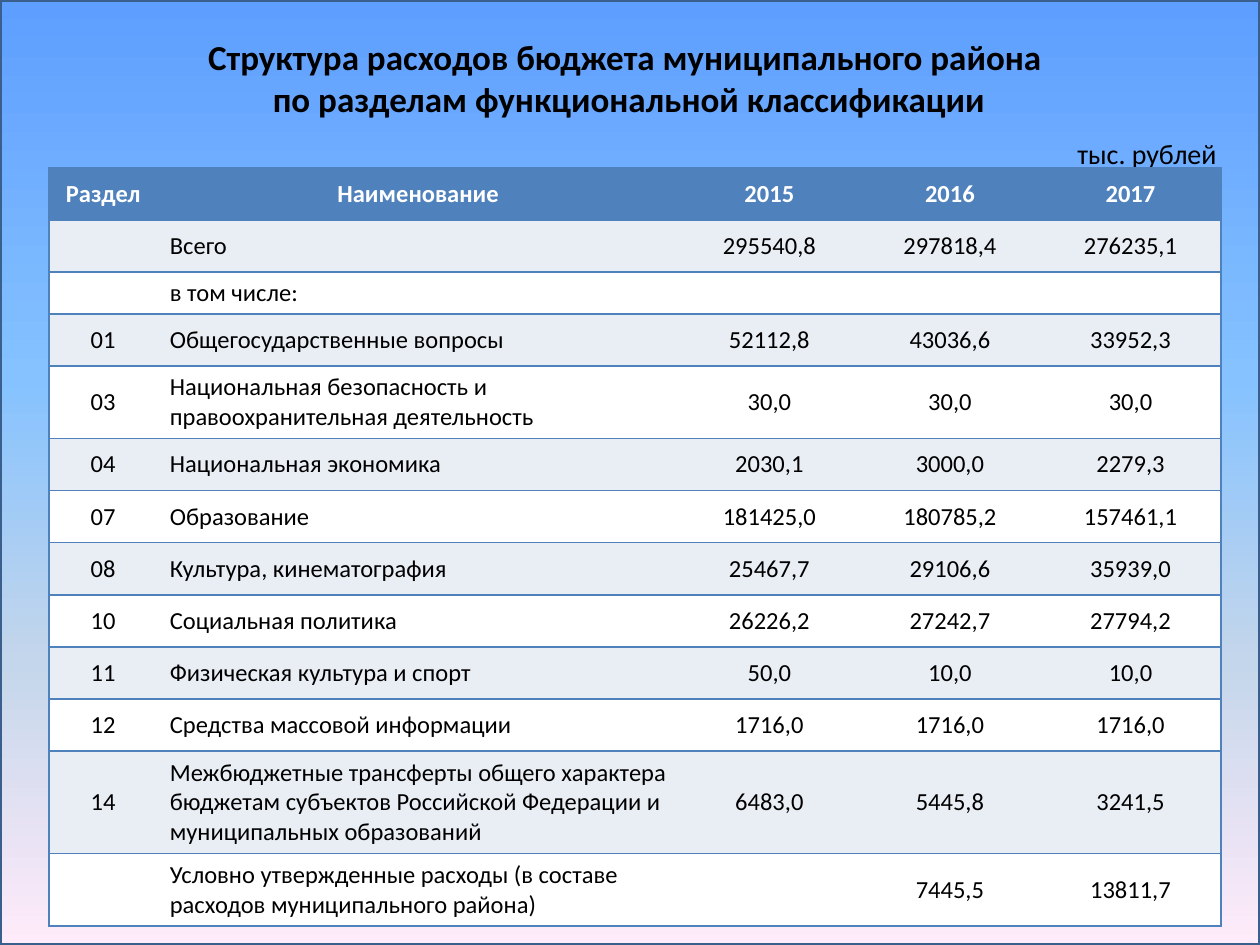
from lxml.etree import SubElement
from pptx import Presentation
from pptx.dml.color import RGBColor
from pptx.enum.shapes import MSO_SHAPE
from pptx.enum.text import MSO_ANCHOR, MSO_AUTO_SIZE, PP_ALIGN
from pptx.oxml.ns import qn
from pptx.util import Cm, Pt

FONT = "Calibri"
BLUE = "4F81BD"
BANDS = ("FFFFFF", "E9EDF4")
GRADIENT = ((0, "5E9EFF"), (40, "85C2FF"), (70, "C4D6EB"), (100, "FFEBFA"))
COLUMN_WIDTHS = (2.18, 10.52, 3.64, 3.64, 3.64)
ROW_HEIGHT = 1.05
SPECIAL_HEIGHTS = {2: 0.85, 4: 1.46, 11: 2.07, 12: 1.46}
ROWS = (
    ("Раздел", "Наименование", "2015", "2016", "2017"),
    ("", "Всего", "295540,8", "297818,4", "276235,1"),
    ("", "в том числе:", "", "", ""),
    ("01", "Общегосударственные вопросы", "52112,8", "43036,6", "33952,3"),
    ("03", "Национальная безопасность и правоохранительная деятельность",
     "30,0", "30,0", "30,0"),
    ("04", "Национальная экономика", "2030,1", "3000,0", "2279,3"),
    ("07", "Образование", "181425,0", "180785,2", "157461,1"),
    ("08", "Культура, кинематография", "25467,7", "29106,6", "35939,0"),
    ("10", "Социальная политика", "26226,2", "27242,7", "27794,2"),
    ("11", "Физическая культура и спорт", "50,0", "10,0", "10,0"),
    ("12", "Средства массовой информации", "1716,0", "1716,0", "1716,0"),
    ("14", "Межбюджетные трансферты общего характера бюджетам субъектов "
     "Российской Федерации и муниципальных образований",
     "6483,0", "5445,8", "3241,5"),
    ("", "Условно утвержденные расходы (в составе расходов муниципального района)",
     "", "7445,5", "13811,7"),
)


def color(value):
    return RGBColor.from_string(value)


def apply_format(target, values):
    for name, value in values.items():
        setattr(target, name, value)


def write_paragraph(para, text, size, bold, ink, layout):
    para.text = text
    apply_format(para, layout)
    for span in para.runs:
        apply_format(span.font, {"name": FONT, "size": Pt(size), "bold": bold})
        span.font.color.rgb = color(ink)
    if not text:
        SubElement(para._p, qn("a:endParaRPr"), sz=str(size * 100))


def add_backdrop(page, deck):
    box = page.shapes.add_shape(
        MSO_SHAPE.RECTANGLE, 0, 0, deck.slide_width, deck.slide_height)
    box.shadow.inherit = False
    box.line.color.rgb = color("3A5F8C")
    box.line.width = Pt(2)
    box.fill.gradient()
    box.fill.gradient_angle = 270
    stops = box._element.spPr.find(".//" + qn("a:gsLst"))
    for stop in list(stops):
        stops.remove(stop)
    for position, value in GRADIENT:
        stop = SubElement(stops, qn("a:gs"), pos=str(position * 1000))
        SubElement(stop, qn("a:srgbClr"), val=value)


def move_to_front(page, shape):
    page.shapes._spTree.append(shape._element)


def fill_title(box):
    apply_format(box, {"left": Cm(0.58), "top": Cm(0.58),
                       "width": Cm(24.2), "height": Cm(3.07)})
    frame = box.text_frame
    apply_format(frame, {"word_wrap": True, "vertical_anchor": MSO_ANCHOR.TOP,
                         "auto_size": MSO_AUTO_SIZE.SHAPE_TO_FIT_TEXT})
    write_paragraph(
        frame.paragraphs[0],
        "Структура расходов бюджета муниципального района \v"
        "по разделам функциональной классификации",
        20, True, "000000", {"alignment": PP_ALIGN.CENTER})
    write_paragraph(
        frame.add_paragraph(), "тыс. рублей", 16, False, "000000",
        {"alignment": PP_ALIGN.RIGHT, "space_before": Pt(9.8)})


def set_borders(cell, visible_sides):
    properties = cell._tc.get_or_add_tcPr()
    for side in "LRTB":
        line = SubElement(properties, qn("a:ln" + side), w=str(Pt(1)))
        if side in visible_sides:
            solid = SubElement(line, qn("a:solidFill"))
            SubElement(solid, qn("a:srgbClr"), val=BLUE)
        else:
            SubElement(line, qn("a:noFill"))


def fill_cell(cell, text, row, column):
    header = row == 0
    edges = {0: "L", len(COLUMN_WIDTHS) - 1: "R"}
    set_borders(cell, "TB" + edges.get(column, ""))
    cell.fill.solid()
    cell.fill.fore_color.rgb = color(BLUE if header else BANDS[row % 2])
    cell.vertical_anchor = MSO_ANCHOR.MIDDLE
    left_aligned = column == 1 and not header
    write_paragraph(
        cell.text_frame.paragraphs[0], text, 14, header,
        "FFFFFF" if header else "000000",
        {"alignment": PP_ALIGN.LEFT if left_aligned else PP_ALIGN.CENTER})


def add_budget_table(page):
    heights = [SPECIAL_HEIGHTS.get(row, ROW_HEIGHT) for row in range(len(ROWS))]
    table = page.shapes.add_table(
        len(ROWS), len(COLUMN_WIDTHS), Cm(0.99), Cm(3.38),
        Cm(sum(COLUMN_WIDTHS)), Cm(sum(heights))).table
    for column, width in zip(table.columns, COLUMN_WIDTHS):
        column.width = Cm(width)
    for row, height in zip(table.rows, heights):
        row.height = Cm(height)
    for row, texts in enumerate(ROWS):
        for column, text in enumerate(texts):
            fill_cell(table.cell(row, column), text, row, column)


def main():
    deck = Presentation()
    apply_format(deck, {"slide_width": Cm(25.4), "slide_height": Cm(19.05)})
    page = deck.slides.add_slide(deck.slide_layouts[5])
    add_backdrop(page, deck)
    fill_title(page.shapes.title)
    move_to_front(page, page.shapes.title)
    add_budget_table(page)
    deck.save("out.pptx")


if __name__ == "__main__":
    main()
